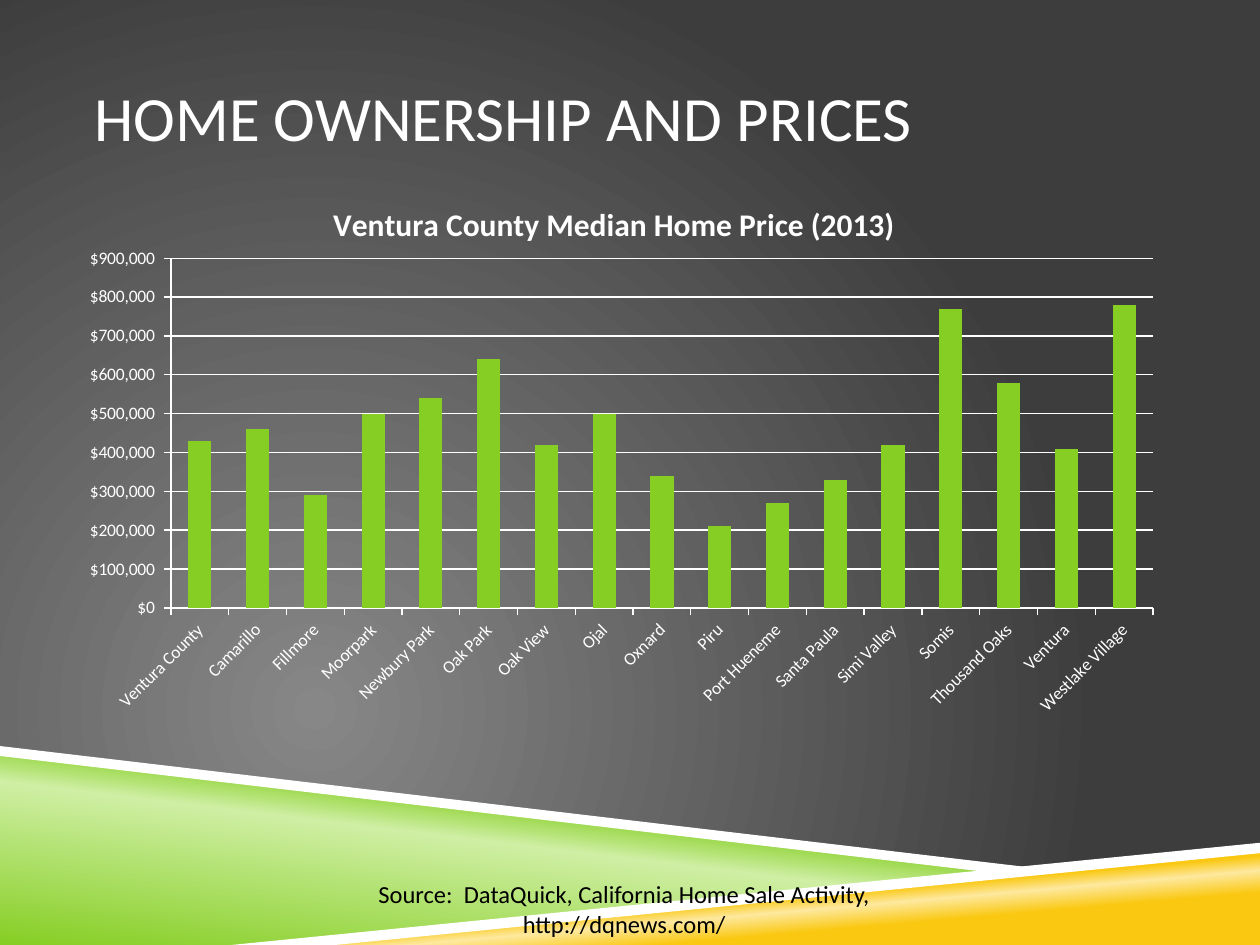
from lxml import etree
from pptx import Presentation
from pptx.chart.data import CategoryChartData
from pptx.dml.color import RGBColor
from pptx.enum.chart import XL_CHART_TYPE as ChartType, XL_TICK_MARK as TickMark
from pptx.enum.text import MSO_ANCHOR as Anchor, PP_ALIGN as Align
from pptx.oxml import parse_xml
from pptx.oxml.ns import nsdecls, qn
from pptx.util import Cm, Pt

WHITE = RGBColor(0xFF, 0xFF, 0xFF)
BLACK = RGBColor(0x00, 0x00, 0x00)
GRAY = RGBColor(0x87, 0x87, 0x87)
CHARCOAL = RGBColor(0x3D, 0x3D, 0x3D)
GREEN = RGBColor(0x86, 0xCE, 0x24)
PALE_GREEN = RGBColor(0xCF, 0xEF, 0xA4)
GOLD = RGBColor(0xFA, 0xC8, 0x10)
PALE_GOLD = RGBColor(0xFD, 0xE9, 0x9F)

LINEAR = '<a:lin ang="{}" scaled="0"/>'
RADIAL = ('<a:path path="circle"><a:fillToRect l="50000" t="100000" '
          'r="100000" b="50000"/></a:path>')

MEDIAN_PRICES = {
    "Ventura County": 430000, "Camarillo": 460000, "Fillmore": 290000,
    "Moorpark": 500000, "Newbury Park": 540000, "Oak Park": 640000,
    "Oak View": 420000, "Ojal": 500000, "Oxnard": 340000, "Piru": 210000,
    "Port Hueneme": 270000, "Santa Paula": 330000, "Simi Valley": 420000,
    "Somis": 770000, "Thousand Oaks": 580000, "Ventura": 410000,
    "Westlake Village": 780000,
}


def write_text(para, text, size, color, font="Calibri", bold=False, align=None):
    para.alignment = align
    span = para.add_run()
    span.text = text
    span.font.name = font
    span.font.size = Pt(size)
    span.font.bold = bold
    span.font.color.rgb = color


def gradient(stops, direction):
    marks = "".join(
        f'<a:gs pos="{place * 1000}"><a:srgbClr val="{color}"/></a:gs>'
        for place, color in stops)
    return parse_xml(f'<a:gradFill {nsdecls("a")} rotWithShape="1">'
                     f'<a:gsLst>{marks}</a:gsLst>{direction}</a:gradFill>')


def replace_fill(properties, new_fill):
    old_fill = properties.find(qn("a:solidFill"))
    properties.replace(old_fill, new_fill)


class SlideBuilder:
    def __init__(self, page, font, text_color):
        self.page = page
        self.font = font
        self.text_color = text_color

    def background(self, stops):
        fill = self.page.background.fill
        fill.solid()
        fill.fore_color.rgb = stops[-1][1]
        properties = self.page.background._cSld.bg.bgPr
        replace_fill(properties, gradient(stops, RADIAL))

    def band(self, points, color, stops=None, angle=0):
        corners = [(Cm(x), Cm(y)) for x, y in points]
        builder = self.page.shapes.build_freeform(*corners[0])
        builder.add_line_segments(corners[1:], close=True)
        shape = builder.convert_to_shape()
        shape.shadow.inherit = False
        shape.line.fill.background()
        shape.fill.solid()
        shape.fill.fore_color.rgb = color
        if stops:
            direction = LINEAR.format(angle * 60000)
            replace_fill(shape._element.spPr, gradient(stops, direction))

    def title(self, text, left, top, width, height):
        box = self.page.shapes.title
        box.left, box.top, box.width, box.height = map(Cm, (left, top, width, height))
        frame = box.text_frame
        frame.margin_left = frame.margin_right = 0
        frame.vertical_anchor = Anchor.MIDDLE
        write_text(frame.paragraphs[0], text, 36, self.text_color, self.font,
                   align=Align.LEFT)

    def text(self, lines, left, top, width, height, size, color):
        box = self.page.shapes.add_textbox(*map(Cm, (left, top, width, height)))
        frame = box.text_frame
        frame.word_wrap = True
        for index, line in enumerate(lines):
            para = frame.add_paragraph() if index else frame.paragraphs[0]
            write_text(para, line, size, color, self.font, align=Align.CENTER)

    def column_chart(self, heading, prices, left, top, width, height, color):
        data = CategoryChartData()
        data.categories = list(prices)
        data.add_series("Series 1", list(prices.values()))
        chart = self.page.shapes.add_chart(
            ChartType.COLUMN_CLUSTERED, *map(Cm, (left, top, width, height)), data).chart
        chart.font.name = self.font
        chart.font.size = Pt(10)
        chart.font.color.rgb = self.text_color
        chart.has_legend = False
        chart.has_title = True
        write_text(chart.chart_title.text_frame.paragraphs[0], heading, 18,
                   self.text_color, self.font, bold=True)
        chart.chart_title.include_in_layout = False

        plot = chart.plots[0]
        plot.gap_width = 150
        plot.vary_by_categories = False
        columns = plot.series[0].format.fill
        columns.solid()
        columns.fore_color.rgb = color

        values, names = chart.value_axis, chart.category_axis
        values.minimum_scale, values.maximum_scale = 0, 900000
        values.major_unit = 100000
        values.has_major_gridlines = True
        values.tick_labels.number_format = '"$"#,##0_);[Red]\\("$"#,##0\\)'
        values.tick_labels.number_format_is_linked = False
        for axis in (values, names):
            axis.major_tick_mark = TickMark.OUTSIDE
            axis.tick_labels.font.size = Pt(10)
        for part in (values, names, values.major_gridlines):
            part.format.line.color.rgb = self.text_color
            part.format.line.width = Pt(0.75)
        names._element.txPr.find(qn("a:bodyPr")).set("rot", "-2700000")
        self.place_plot(chart, x=0.098, y=0.142, w=0.891, h=0.628)

    def place_plot(self, chart, **shares):
        area = chart._chartSpace.chart.plotArea
        for old_layout in area.findall(qn("c:layout")):
            area.remove(old_layout)
        layout = etree.Element(qn("c:layout"))
        manual = etree.SubElement(layout, qn("c:manualLayout"))
        settings = [("layoutTarget", "inner"), ("xMode", "edge"), ("yMode", "edge")]
        for name, value in settings + list(shares.items()):
            etree.SubElement(manual, qn(f"c:{name}")).set("val", str(value))
        area.insert(0, layout)


def main():
    deck = Presentation()
    deck.slide_width, deck.slide_height = Cm(25.4), Cm(19.05)
    page = deck.slides.add_slide(deck.slide_layouts[5])
    slide = SlideBuilder(page, "Calibri", WHITE)

    slide.background([(0, GRAY), (100, CHARCOAL)])
    slide.band([(0, 15.16), (20.12, 17.58), (5.08, 19.05), (0, 19.05)], GREEN,
               [(0, GREEN), (52, PALE_GREEN), (66, GREEN)], 277)
    slide.band([(5.03, 19.05), (25.4, 17.07), (25.4, 19.05)], GOLD,
               [(28, GOLD), (40, PALE_GOLD), (48, GOLD)], 265)
    slide.band([(0, 15.04), (0, 15.24), (20.07, 17.6), (21.13, 17.53)], WHITE)
    slide.band([(25.4, 16.99), (4.67, 19.05), (6.76, 19.05), (25.4, 17.2)], WHITE)

    slide.title("HOME OWNERSHIP AND PRICES", 1.9, 0.76, 21.6, 3.18)
    slide.column_chart("Ventura County Median Home Price (2013)", MEDIAN_PRICES,
                       1.27, 3.61, 22.22, 11.23, GREEN)
    slide.text(["Source:  DataQuick, California Home Sale Activity,",
                "http://dqnews.com/"], 2.11, 17.6, 20.95, 1.45, 14, BLACK)
    deck.save("out.pptx")


if __name__ == "__main__":
    main()
